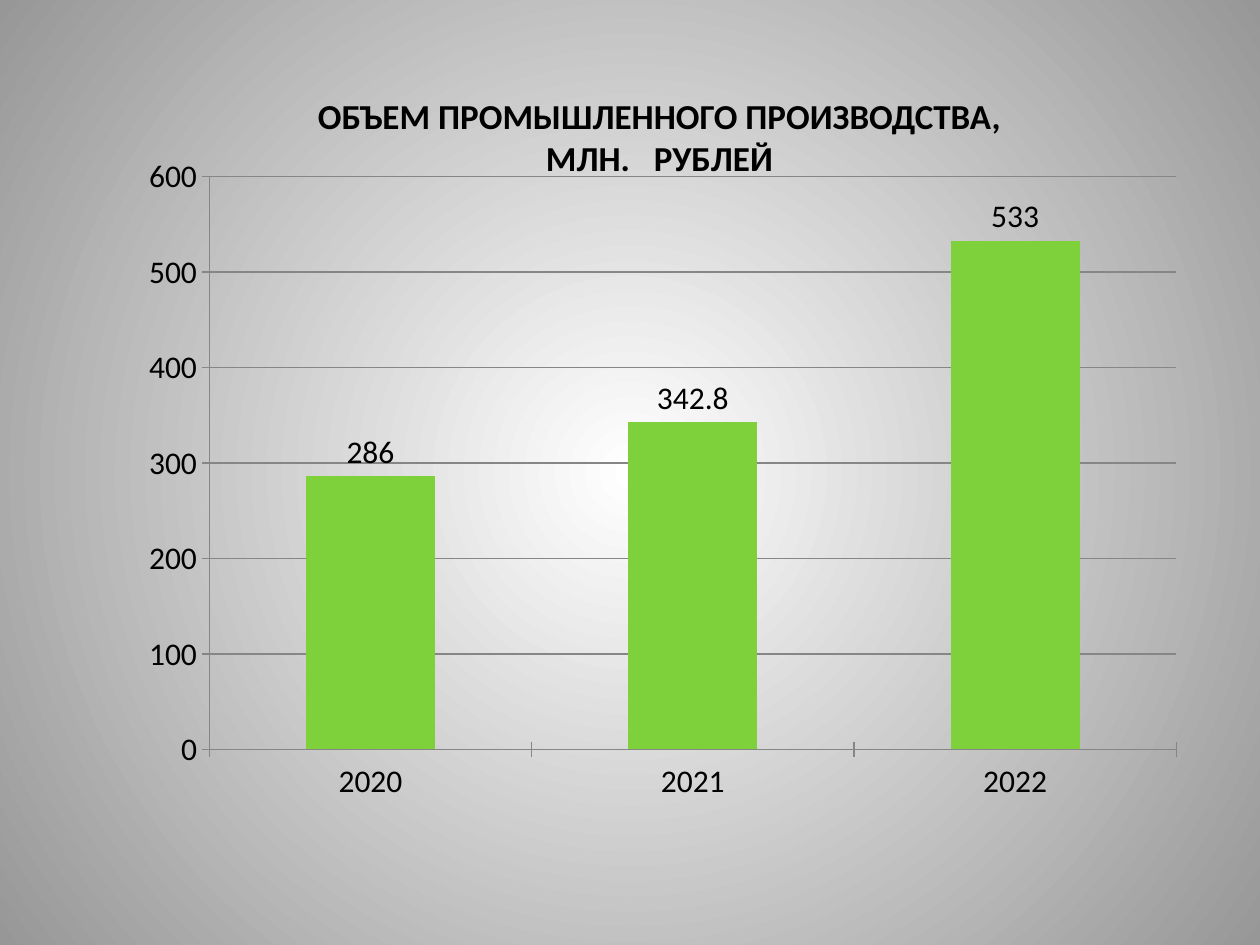
from lxml import etree
from pptx import Presentation
from pptx.chart.data import CategoryChartData
from pptx.dml.color import RGBColor
from pptx.enum.chart import XL_CHART_TYPE as ChartType
from pptx.enum.chart import XL_LABEL_POSITION as LabelPosition
from pptx.enum.chart import XL_TICK_MARK as TickMark
from pptx.enum.text import MSO_AUTO_SIZE as AutoSize
from pptx.enum.text import PP_ALIGN as Align
from pptx.oxml import parse_xml
from pptx.oxml.ns import nsdecls, qn
from pptx.util import Pt

PX = 914400 / 126
FONT = "Calibri"
BLACK = RGBColor(0x00, 0x00, 0x00)
GREEN = RGBColor(0x7F, 0xD1, 0x3B)
GRAY = RGBColor(0x86, 0x86, 0x86)
WHITE = RGBColor(0xFF, 0xFF, 0xFF)
EDGE_GRAY = RGBColor(0x97, 0x97, 0x97)


def emu(*lengths):
    return [round(length * PX) for length in lengths]


def format_font(font, size, color=BLACK, bold=False):
    font.name = FONT
    font.size = Pt(size)
    font.bold = bold
    font.color.rgb = color


def add_text(slide, box, lines, size, color=BLACK, bold=False, align=Align.CENTER):
    shape = slide.shapes.add_textbox(*emu(*box))
    frame = shape.text_frame
    frame.word_wrap = True
    frame.auto_size = AutoSize.SHAPE_TO_FIT_TEXT
    frame.text = "\n".join(lines)
    for paragraph in frame.paragraphs:
        paragraph.alignment = align
        for run in paragraph.runs:
            format_font(run.font, size, color, bold)


def paint_background(slide, inner, outer):
    """Radial gradient from the centre of the slide to its corners."""
    fill = slide.background.fill
    fill.gradient()
    for stop, color, position in zip(fill.gradient_stops, (inner, outer), (0, 1)):
        stop.color.rgb = color
        stop.position = position
    gradient = next(slide.background._cSld.iter(qn("a:gradFill")))
    gradient.remove(gradient.find(qn("a:lin")))
    gradient.find(qn("a:gsLst")).addnext(parse_xml(
        f'<a:path {nsdecls("a")} path="circle">'
        '<a:fillToRect l="50000" t="50000" r="50000" b="50000"/></a:path>'))


def set_plot_layout(chart, **fractions):
    """Fix the inner plot area as fractions of the chart box."""
    plot_area = next(chart._chartSpace.iter(qn("c:plotArea")))
    for old in plot_area.findall(qn("c:layout")):
        plot_area.remove(old)
    layout = etree.Element(qn("c:layout"))
    manual = etree.SubElement(layout, qn("c:manualLayout"))
    settings = {"layoutTarget": "inner", "xMode": "edge", "yMode": "edge", **fractions}
    for name, value in settings.items():
        etree.SubElement(manual, qn(f"c:{name}"), val=str(value))
    plot_area.insert(0, layout)


def add_production_chart(slide, box):
    data = CategoryChartData()
    data.categories = ["2020", "2021", "2022"]
    data.add_series("Series 1", (286, 342.8, 533))
    chart = slide.shapes.add_chart(ChartType.COLUMN_CLUSTERED, *emu(*box), data).chart
    chart.has_title = False
    chart.has_legend = False
    format_font(chart.font, 18)
    set_plot_layout(chart, x=0.133, y=0.056, w=0.855, h=0.808)

    # Axes and grid
    chart.value_axis.minimum_scale = 0
    chart.value_axis.maximum_scale = 600
    chart.value_axis.major_unit = 100
    chart.value_axis.has_major_gridlines = True
    for axis in (chart.category_axis, chart.value_axis):
        axis.major_tick_mark = TickMark.CROSS
        axis.format.line.color.rgb = GRAY
    chart.value_axis.major_gridlines.format.line.color.rgb = GRAY

    # Columns and their values
    plot = chart.plots[0]
    plot.gap_width = 150
    plot.vary_by_categories = False
    series = plot.series[0]
    series.format.fill.solid()
    series.format.fill.fore_color.rgb = GREEN
    labels = series.data_labels
    labels.show_value = True
    labels.position = LabelPosition.OUTSIDE_END
    format_font(labels.font, 18)


def main():
    presentation = Presentation()
    presentation.slide_width, presentation.slide_height = emu(1260, 945)
    slide = presentation.slides.add_slide(presentation.slide_layouts[6])
    paint_background(slide, WHITE, EDGE_GRAY)
    add_text(slide, (197, 88, 925, 97),
             ["ОБЪЕМ ПРОМЫШЛЕННОГО ПРОИЗВОДСТВА,", "МЛН.   РУБЛЕЙ"],
             size=20, bold=True)
    add_production_chart(slide, (59, 137, 1131, 709))
    presentation.save("out.pptx")


if __name__ == "__main__":
    main()
